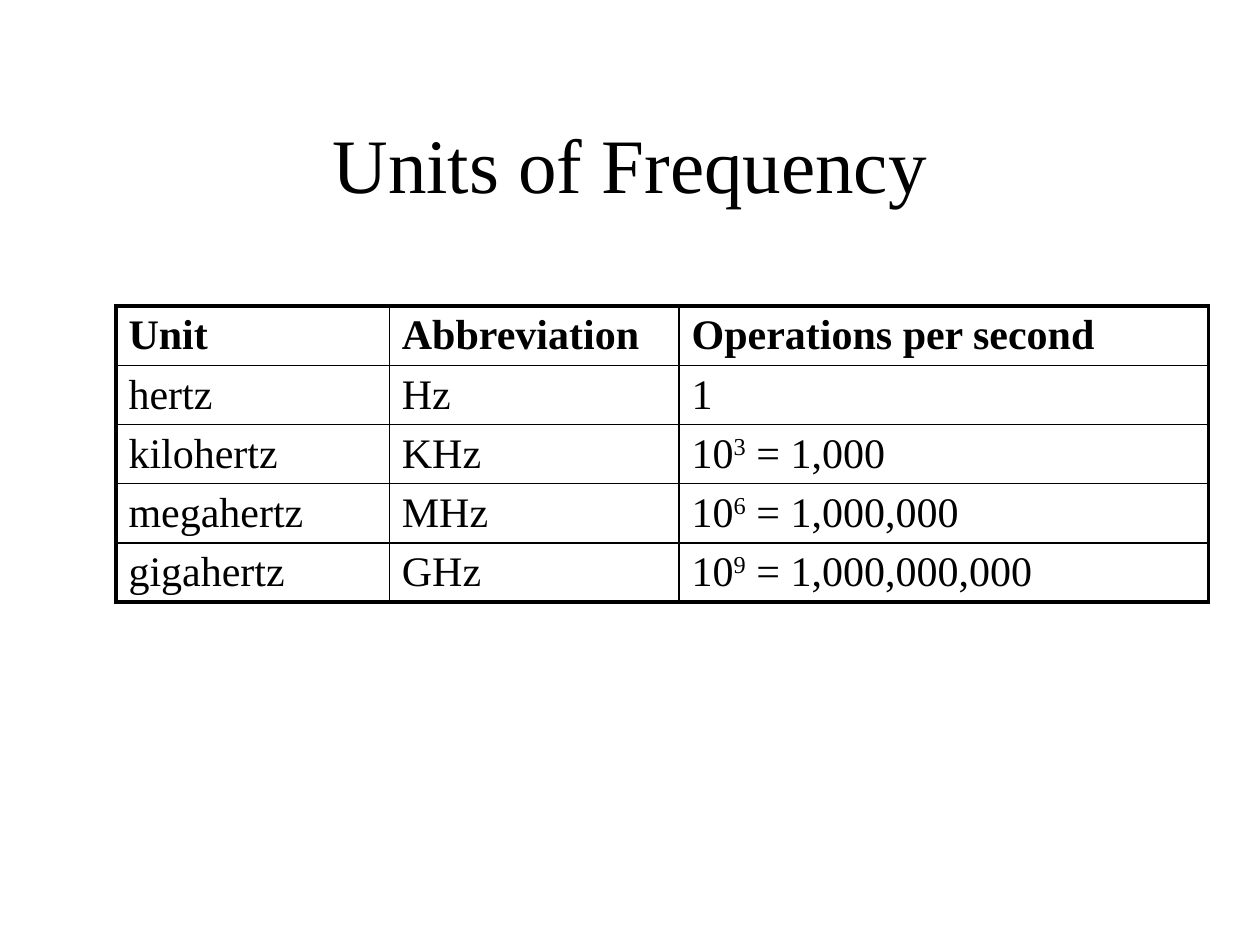
from lxml.etree import SubElement
from pptx import Presentation
from pptx.dml.color import RGBColor
from pptx.enum.text import MSO_ANCHOR, PP_ALIGN
from pptx.oxml.ns import qn
from pptx.util import Inches, Pt

BLACK = RGBColor(0, 0, 0)
FONT = "Times New Roman"
THIN, THICK = Pt(1), Pt(2.25)
COLUMN_WIDTHS = [2.17, 2.3, 4.2]
ROW_HEIGHT = 0.47
ROWS = [
    ("Unit", "Abbreviation", ["Operations per second"]),
    ("hertz", "Hz", ["1"]),
    ("kilohertz", "KHz", ["10", "3", " = 1,000"]),
    ("megahertz", "MHz", ["10", "6", " = 1,000,000"]),
    ("gigahertz", "GHz", ["10", "9", " = 1,000,000,000"]),
]


def style_font(font, size, bold=False):
    font.name = FONT
    font.size = Pt(size)
    font.bold = bold
    font.color.rgb = BLACK


def add_border(cell, side, width):
    line = SubElement(cell._tc.get_or_add_tcPr(), qn(f"a:ln{side}"), w=str(width))
    fill = SubElement(line, qn("a:solidFill"))
    SubElement(fill, qn("a:srgbClr"), val=str(BLACK))


presentation = Presentation()
presentation.slide_width = Inches(10)
presentation.slide_height = Inches(7.5)
slide = presentation.slides.add_slide(presentation.slide_layouts[5])

title = slide.shapes.title
title.left, title.top = Inches(0.75), Inches(0.67)
title.width, title.height = Inches(8.5), Inches(1.25)
title.text_frame.text = "Units of Frequency"
title.text_frame.vertical_anchor = MSO_ANCHOR.MIDDLE
title_paragraph = title.text_frame.paragraphs[0]
title_paragraph.alignment = PP_ALIGN.CENTER
style_font(title_paragraph.font, 44)

last_row, last_column = len(ROWS) - 1, len(COLUMN_WIDTHS) - 1
table = slide.shapes.add_table(
    len(ROWS), len(COLUMN_WIDTHS), Inches(0.92), Inches(2.43),
    Inches(sum(COLUMN_WIDTHS)), Inches(ROW_HEIGHT * len(ROWS)),
).table
table.first_row = False
table.horz_banding = False
for column, width in zip(table.columns, COLUMN_WIDTHS):
    column.width = Inches(width)

for row_index, row_texts in enumerate(ROWS):
    table.rows[row_index].height = Inches(ROW_HEIGHT)
    for column_index, parts in enumerate(row_texts):
        cell = table.cell(row_index, column_index)
        outer_sides = {
            "L": column_index == 0,
            "R": column_index == last_column,
            "T": row_index == 0,
            "B": row_index == last_row,
        }
        for side, is_outer in outer_sides.items():
            add_border(cell, side, THICK if is_outer else THIN)
        cell.fill.background()

        paragraph = cell.text_frame.paragraphs[0]
        spacing = SubElement(paragraph._p.get_or_add_pPr(), qn("a:spcBef"))
        SubElement(spacing, qn("a:spcPct"), val="20000")
        style_font(paragraph.font, 24, bold=row_index == 0)
        if isinstance(parts, str):
            parts = [parts]
        for part_index, part in enumerate(parts):
            run = paragraph.add_run()
            run.text = part
            if part_index == 1:
                run.font._element.set("baseline", "30000")

presentation.save("out.pptx")
